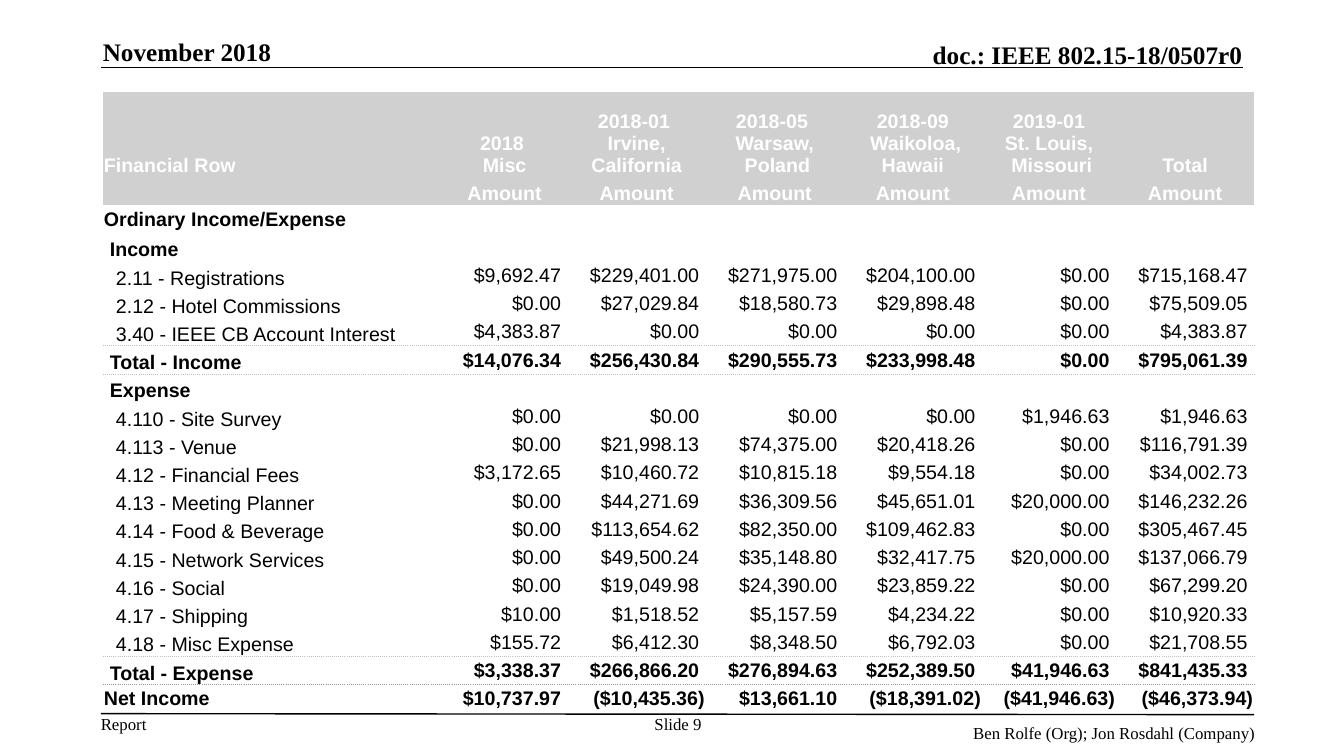
from dataclasses import dataclass

from lxml import etree
from pptx import Presentation
from pptx.dml.color import RGBColor
from pptx.enum.shapes import MSO_CONNECTOR
from pptx.enum.text import MSO_ANCHOR, PP_ALIGN
from pptx.oxml.ns import qn
from pptx.util import Inches, Pt

LEFT, CENTER, RIGHT = PP_ALIGN.LEFT, PP_ALIGN.CENTER, PP_ALIGN.RIGHT
TOP, MIDDLE, BOTTOM = MSO_ANCHOR.TOP, MSO_ANCHOR.MIDDLE, MSO_ANCHOR.BOTTOM
STRAIGHT = MSO_CONNECTOR.STRAIGHT


@dataclass(frozen=True)
class Theme:
    black: str = "000000"
    white: str = "FFFFFF"
    header: str = "D0D0D0"
    rule: str = "C0C0C0"
    net_rule: str = "969696"
    serif: str = "Times New Roman"
    sans: str = "Arial"
    title: int = 18
    cell: int = 14
    footer: int = 12


T = Theme()
NO_STYLE = "{2D5ABB26-0587-4C30-8999-92F81FD0307C}"
COL_WIDTHS = (3.36, 1.25, 1.37, 1.37, 1.37, 1.33, 1.37)
ROW_H, TITLE_H, HEAD_H = 0.28, 0.25, 0.84
INDENT = 0.06

HEADINGS = ("Financial Row", "2018 \nMisc", "2018-01 \nIrvine,\nCalifornia",
            "2018-05 \nWarsaw,\n Poland", "2018-09\n Waikoloa,\nHawaii",
            "2019-01\nSt. Louis,\n Missouri", "Total")

# Indent level, bold, label, amounts
ROWS = (
    (0, True, "Ordinary Income/Expense", ()),
    (1, True, "Income", ()),
    (2, False, "2.11 - Registrations", (9692.47, 229401, 271975, 204100, 0, 715168.47)),
    (2, False, "2.12 - Hotel Commissions", (0, 27029.84, 18580.73, 29898.48, 0, 75509.05)),
    (2, False, "3.40 - IEEE CB Account Interest", (4383.87, 0, 0, 0, 0, 4383.87)),
    (1, True, "Total - Income", (14076.34, 256430.84, 290555.73, 233998.48, 0, 795061.39)),
    (1, True, "Expense", ()),
    (2, False, "4.110 - Site Survey", (0, 0, 0, 0, 1946.63, 1946.63)),
    (2, False, "4.113 - Venue", (0, 21998.13, 74375, 20418.26, 0, 116791.39)),
    (2, False, "4.12 - Financial Fees", (3172.65, 10460.72, 10815.18, 9554.18, 0, 34002.73)),
    (2, False, "4.13 - Meeting Planner", (0, 44271.69, 36309.56, 45651.01, 20000, 146232.26)),
    (2, False, "4.14 - Food & Beverage", (0, 113654.62, 82350, 109462.83, 0, 305467.45)),
    (2, False, "4.15 - Network Services", (0, 49500.24, 35148.8, 32417.75, 20000, 137066.79)),
    (2, False, "4.16 - Social", (0, 19049.98, 24390, 23859.22, 0, 67299.2)),
    (2, False, "4.17 - Shipping", (10, 1518.52, 5157.59, 4234.22, 0, 10920.33)),
    (2, False, "4.18 - Misc Expense", (155.72, 6412.3, 8348.5, 6792.03, 0, 21708.55)),
    (1, True, "Total - Expense",
     (3338.37, 266866.2, 276894.63, 252389.5, 41946.63, 841435.33)),
    (0, True, "Net Income",
     (10737.97, -10435.36, 13661.1, -18391.02, -41946.63, -46373.94)),
)
# Dotted rule above these rows
RULES = {"Total - Income": T.rule, "Total - Expense": T.rule, "Net Income": T.net_rule}


def write(tf, text, size=T.cell, font=T.sans, color=T.black, bold=False, align=LEFT):
    """Fill the first paragraph; each line feed is a line break."""
    p = tf.paragraphs[0]
    p.alignment = align
    if not text:
        etree.SubElement(p._p, qn("a:endParaRPr"), sz=str(size * 100))
    for i, line in enumerate(text.split("\n") if text else ()):
        if i:
            p.add_line_break()
        r = p.add_run()
        r.text = line
        r.font.size, r.font.name, r.font.bold = Pt(size), font, bold
        r.font.color.rgb = RGBColor.from_string(color)


def add_text(s, box, text, anchor=TOP, wrap=True, **fmt):
    tf = s.shapes.add_textbox(*map(Inches, box)).text_frame
    tf.margin_left = tf.margin_right = tf.margin_top = tf.margin_bottom = 0
    tf.word_wrap, tf.vertical_anchor = wrap, anchor
    write(tf, text, font=T.serif, **fmt)


def add_rule(s, x1, y1, x2, y2):
    line = s.shapes.add_connector(STRAIGHT, *map(Inches, (x1, y1, x2, y2)))
    line.line.color.rgb = RGBColor.from_string(T.black)
    line.line.width = Pt(1)
    etree.SubElement(line._element.spPr, qn("a:effectLst"))


def add_border(cell, side, color):
    ln = etree.SubElement(cell._tc.get_or_add_tcPr(), qn(f"a:ln{side}"), w=str(Pt(0.5)))
    fill = etree.SubElement(ln, qn("a:solidFill"))
    etree.SubElement(fill, qn("a:srgbClr"), val=color)
    etree.SubElement(ln, qn("a:prstDash"), val="sysDot")


def fill_cell(cell, text="", anchor=MIDDLE, indent=0, fill=None, above=None, below=None, **fmt):
    cell.margin_left = Inches(0.01 + indent)
    cell.margin_right = cell.margin_top = Inches(0.01)
    cell.margin_bottom = 0
    cell.vertical_anchor = anchor
    for side, color in (("T", above), ("B", below)):
        if color:
            add_border(cell, side, color)
    if fill:
        cell.fill.solid()
        cell.fill.fore_color.rgb = RGBColor.from_string(fill)
    else:
        cell.fill.background()
    write(cell.text_frame, text, **fmt)


def money(v):
    return f"(${-v:,.2f})" if v < 0 else f"${v:,.2f} "


def header(s, x, y, w):
    add_rule(s, x, y + 0.31, x + w, y + 0.31)
    add_text(s, (x + 0.02, y, 2.73, 0.3), "November 2018", BOTTOM, size=T.title, bold=True)
    add_text(s, (x + w - 7.11, y + 0.03, 7.1, 0.3), "doc.: IEEE 802.15-18/0507r0", BOTTOM,
             size=T.title, bold=True, align=RIGHT)


def footer(s, x, y, w):
    add_rule(s, x, y, x + w, y + 0.01)
    add_text(s, (x, y, 0.46, 0.2), "Report", wrap=False, size=T.footer)
    add_text(s, (x + 5.34, y, 0.77, 0.4), "Slide 9", size=T.footer, align=CENTER)
    add_text(s, (x + w - 4.45, y + 0.09, 4.46, 0.2), "Ben Rolfe (Org); Jon Rosdahl (Company)",
             size=T.footer, align=RIGHT)


def income_table(s, x, y):
    heights = [TITLE_H, HEAD_H] + [ROW_H] * (len(ROWS) + 1)
    tbl = s.shapes.add_table(len(heights), len(COL_WIDTHS), Inches(x), Inches(y),
                             Inches(sum(COL_WIDTHS)), Inches(sum(heights))).table
    tbl.first_row = tbl.horz_banding = False
    tbl._tbl.tblPr.find(qn("a:tableStyleId")).text = NO_STYLE
    for col, w in zip(tbl.columns, COL_WIDTHS):
        col.width = Inches(w)
    for row, h in zip(tbl.rows, heights):
        row.height = Inches(h)

    # Spacer row and two heading rows
    for c, heading in enumerate(HEADINGS):
        fill_cell(tbl.cell(0, c))
        for r, text in ((1, heading), (2, "Amount" if c else "")):
            fill_cell(tbl.cell(r, c), text, BOTTOM, fill=T.header, color=T.white, bold=True,
                      align=CENTER if c else LEFT)
    tbl.cell(0, 0).merge(tbl.cell(0, len(HEADINGS) - 1))

    # Account rows
    next_labels = [row[2] for row in ROWS[1:]] + [None]
    for r, ((level, bold, label, amounts), following) in enumerate(zip(ROWS, next_labels), 3):
        fmt = dict(bold=bold, above=RULES.get(label), below=RULES.get(following))
        fill_cell(tbl.cell(r, 0), label, BOTTOM if level else MIDDLE, level * INDENT, **fmt)
        texts = [money(v) for v in amounts] or [""] * (len(HEADINGS) - 1)
        for c, text in enumerate(texts, 1):
            fill_cell(tbl.cell(r, c), text, align=RIGHT, **fmt)


def main():
    prs = Presentation()
    prs.slide_width, prs.slide_height = Inches(13.33), Inches(7.5)
    s = prs.slides.add_slide(prs.slide_layouts[6])
    header(s, 1, 0.36, 11.33)
    footer(s, 1, 7.08, 11.44)
    income_table(s, 1.02, 0.66)
    prs.save("out.pptx")


if __name__ == "__main__":
    main()
